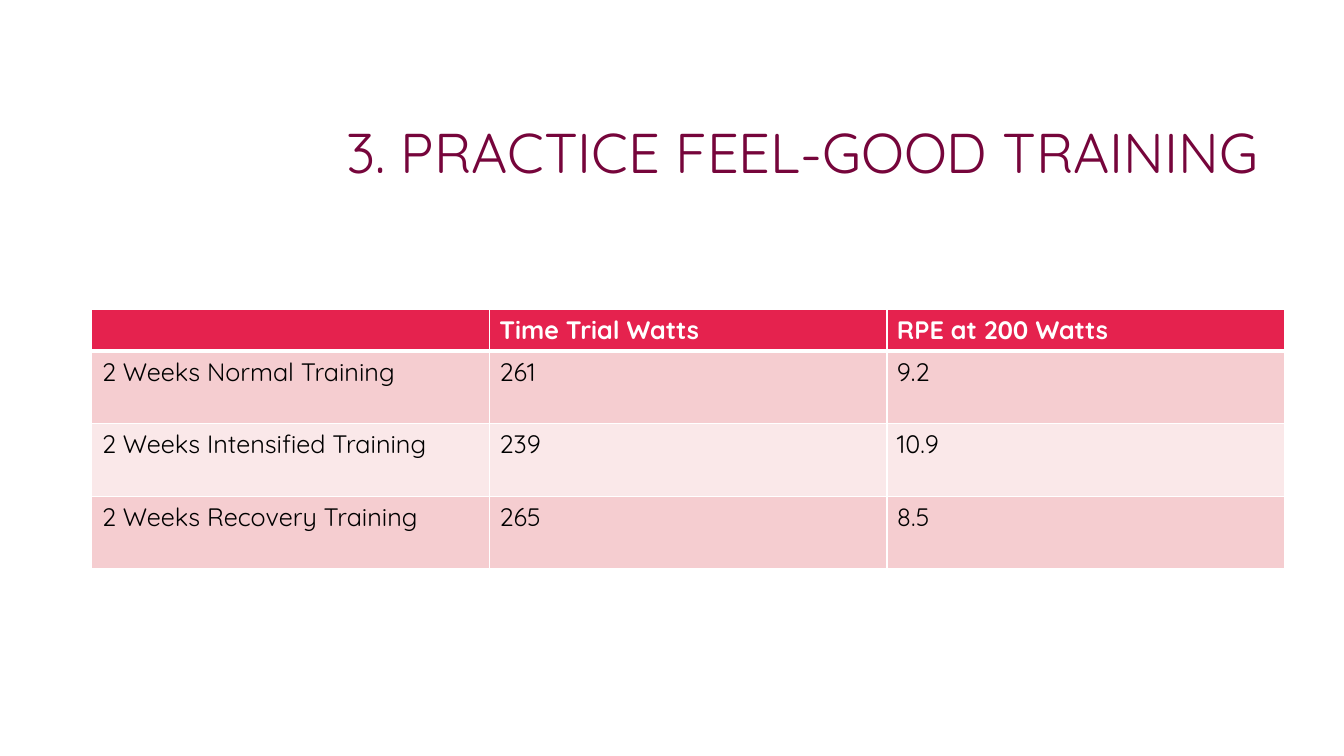
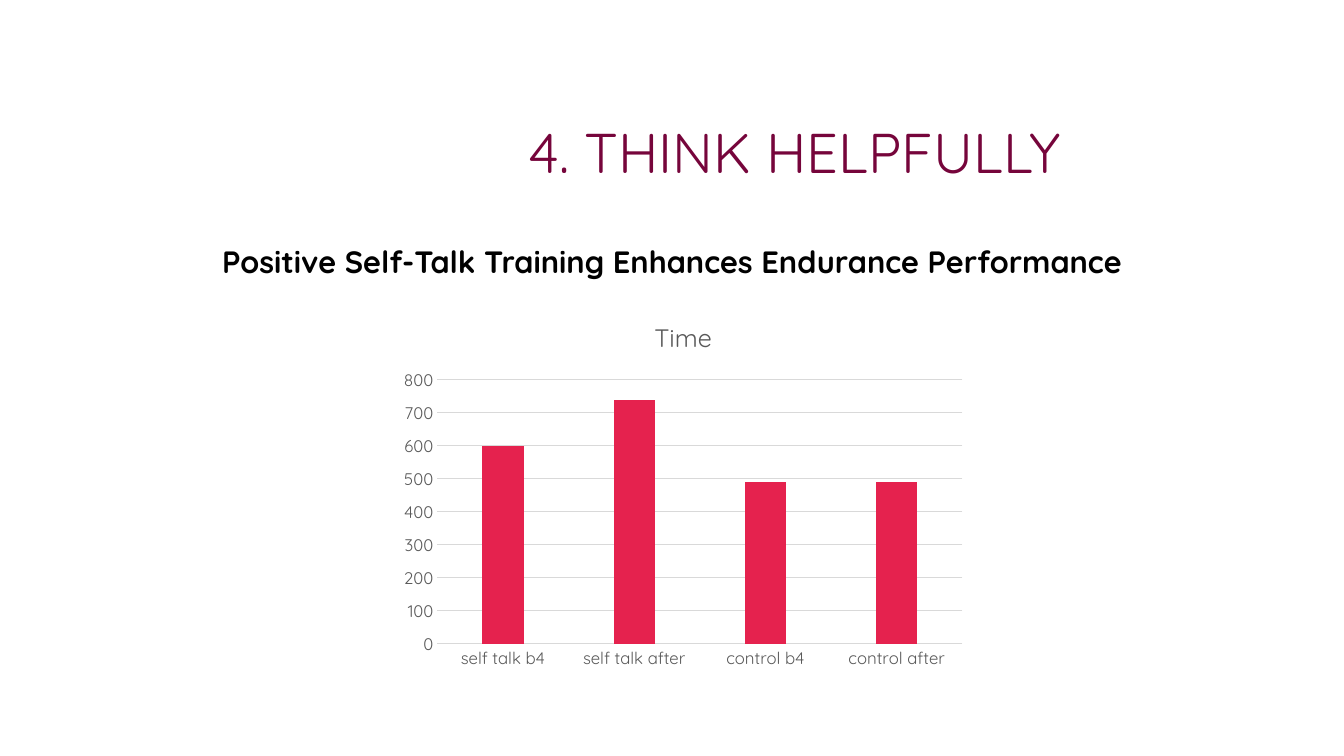
from lxml.etree import SubElement
from pptx import Presentation
from pptx.chart.data import CategoryChartData
from pptx.dml.color import RGBColor
from pptx.enum.chart import XL_CHART_TYPE, XL_TICK_MARK
from pptx.enum.text import MSO_ANCHOR, MSO_AUTO_SIZE, PP_ALIGN
from pptx.oxml.ns import qn
from pptx.util import Inches, Pt

FONT = "Quicksand"
PLUM, RED, WHITE, BLACK = "76053B", "E5224E", "FFFFFF", "000000"
ROW_TINTS = ("F5CDD0", "FAE8E9")
GREY_TEXT, GREY_LINE = "595959", "D9D9D9"
TITLE_ONLY, TITLE_AND_BODY = 5, 1

TRAINING_ROWS = [
    ("", "Time Trial Watts", "RPE at 200 Watts"),
    ("2 Weeks Normal Training", "261", "9.2"),
    ("2 Weeks Intensified Training", "239", "10.9"),
    ("2 Weeks Recovery Training", "265", "8.5"),
]
SELF_TALK_TIMES = {
    "self talk b4": 600,
    "self talk after": 740,
    "control b4": 490,
    "control after": 490,
}


def color(hex_text):
    return RGBColor.from_string(hex_text)


def style_font(font, size, hex_text, bold=False):
    font.name, font.size, font.bold = FONT, Pt(size), bold
    font.color.rgb = color(hex_text)


def add_span(para, text, size, hex_text, bold=False):
    span = para.add_run()
    span.text = text
    style_font(span.font, size, hex_text, bold)


def place(shape, left, top, width, height):
    shape.left, shape.top = Inches(left), Inches(top)
    shape.width, shape.height = Inches(width), Inches(height)


def fill_placeholder(box, text, size, hex_text, align, anchor, bold=False):
    frame = box.text_frame
    frame.word_wrap = True
    frame.auto_size = MSO_AUTO_SIZE.NONE
    frame.vertical_anchor = anchor
    para = frame.paragraphs[0]
    para.alignment, para.line_spacing = align, 0.9
    para.space_before = Pt(0)
    add_span(para, text, size, hex_text, bold)
    return para


def add_titled_slide(deck, layout, title, left, width, align):
    page = deck.slides.add_slide(deck.slide_layouts[layout])
    place(page.shapes.title, left, 0.84, width, 1.41)
    fill_placeholder(page.shapes.title, title, 40, PLUM, align, MSO_ANCHOR.MIDDLE)
    return page


def set_borders(cell, top, bottom):
    """Draw white cell borders; top and bottom are widths in points."""
    properties = cell._tc.get_or_add_tcPr()
    for side, width in (("L", 1), ("R", 1), ("T", top), ("B", bottom)):
        line = SubElement(properties, qn(f"a:ln{side}"), w=str(Pt(width)))
        fill = SubElement(line, qn("a:solidFill"))
        SubElement(fill, qn("a:srgbClr"), val=WHITE)


def add_training_table(page):
    row_count, column_count = len(TRAINING_ROWS), len(TRAINING_ROWS[0])
    header_height, row_height = 0.41, 0.72
    table = page.shapes.add_table(
        row_count, column_count, Inches(0.91), Inches(3.07), Inches(11.83),
        Inches(header_height + row_height * (row_count - 1))).table
    for index, texts in enumerate(TRAINING_ROWS):
        header = index == 0
        table.rows[index].height = Inches(header_height if header else row_height)
        tint = RED if header else ROW_TINTS[(index - 1) % 2]
        for column, text in enumerate(texts):
            cell = table.cell(index, column)
            set_borders(cell, 3 if index == 1 else 1, 3 if header else 1)
            cell.fill.solid()
            cell.fill.fore_color.rgb = color(tint)
            para = cell.text_frame.paragraphs[0]
            if text:
                add_span(para, text, 18, WHITE if header else BLACK, header)
            else:
                style_font(para.font, 18, WHITE)


def style_line(line, hex_text):
    line.color.rgb = color(hex_text)
    line.width = Pt(0.75)


def add_time_chart(page):
    data = CategoryChartData()
    data.categories = list(SELF_TALK_TIMES)
    data.add_series("Series 1", list(SELF_TALK_TIMES.values()))
    chart = page.shapes.add_chart(
        XL_CHART_TYPE.COLUMN_CLUSTERED,
        Inches(3.89), Inches(3), Inches(5.77), Inches(3.71), data).chart
    style_font(chart.font, 10, BLACK)
    chart.has_legend = False
    chart.has_title = True
    add_span(chart.chart_title.text_frame.paragraphs[0], "Time", 18, GREY_TEXT)
    chart.chart_title.include_in_layout = False

    for axis in (chart.category_axis, chart.value_axis):
        axis.major_tick_mark = axis.minor_tick_mark = XL_TICK_MARK.NONE
        style_font(axis.tick_labels.font, 12, GREY_TEXT)
    style_line(chart.category_axis.format.line, GREY_LINE)
    chart.value_axis.format.line.fill.background()
    chart.value_axis.minimum_scale = 0
    chart.value_axis.maximum_scale = 800
    chart.value_axis.major_unit = 100
    style_line(chart.value_axis.major_gridlines.format.line, GREY_LINE)

    plot = chart.plots[0]
    plot.vary_by_categories = False
    plot.gap_width, plot.overlap = 219, -27
    bars = plot.series[0].format.fill
    bars.solid()
    bars.fore_color.rgb = color(RED)


def add_subtitle(page, text):
    body = page.placeholders[1]
    place(body, 0.75, 2.4, 11.83, 4.4)
    para = fill_placeholder(body, text, 22, BLACK, PP_ALIGN.CENTER,
                            MSO_ANCHOR.TOP, bold=True)
    properties = para._p.get_or_add_pPr()
    properties.set("marL", "0")
    properties.set("indent", "0")
    SubElement(properties, qn("a:buNone"))


def main():
    deck = Presentation()
    deck.slide_width, deck.slide_height = Inches(13.33), Inches(7.5)

    page = add_titled_slide(deck, TITLE_ONLY, "3. PRACTICE FEEL-GOOD TRAINING",
                            2.34, 10.24, PP_ALIGN.RIGHT)
    add_training_table(page)

    page = add_titled_slide(deck, TITLE_AND_BODY, "4. THINK HELPFULLY",
                            3.17, 9.42, PP_ALIGN.CENTER)
    add_subtitle(page, "Positive Self‐Talk Training Enhances Endurance Performance")
    add_time_chart(page)

    deck.save("out.pptx")


if __name__ == "__main__":
    main()
